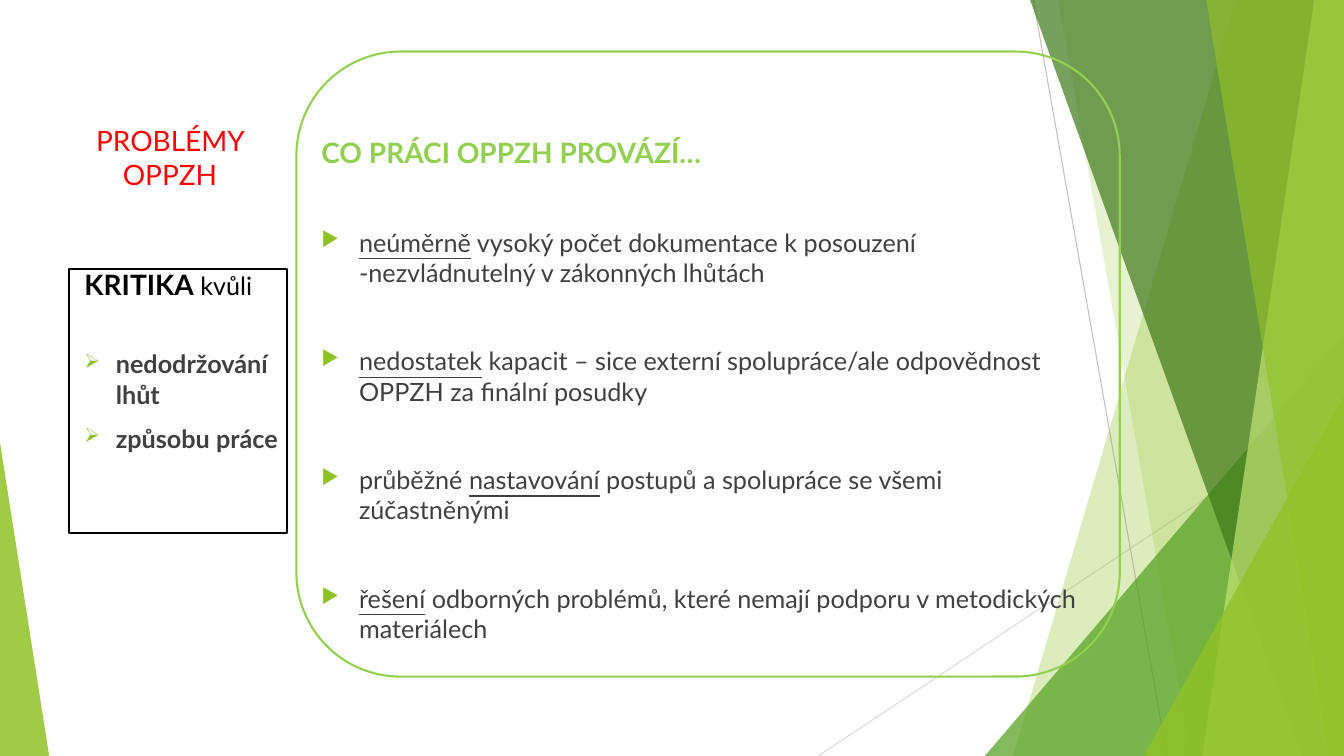
from lxml.etree import SubElement
from pptx import Presentation
from pptx.dml.color import RGBColor
from pptx.enum.shapes import MSO_CONNECTOR, MSO_SHAPE
from pptx.enum.text import MSO_ANCHOR, PP_ALIGN
from pptx.oxml.ns import qn
from pptx.util import Cm, Pt

FONT = "Lato"
GREEN, LIME, GREY = "90C226", "92D050", "404040"
WIDTH, HEIGHT = 33.87, 19.05


def color(hex_value):
    return RGBColor.from_string(hex_value)


def add_run(p, text, size=18, rgb=GREY, bold=False, underline=False):
    r = p.add_run()
    r.text = text
    r.font.name = FONT
    r.font.size = Pt(size)
    r.font.bold = bold
    r.font.underline = underline
    r.font.color.rgb = color(rgb)


def add_text_box(s, x, y, w, h, anchor=MSO_ANCHOR.TOP):
    tf = s.shapes.add_textbox(Cm(x), Cm(y), Cm(w), Cm(h)).text_frame
    tf.word_wrap = True
    tf.vertical_anchor = anchor
    return tf


def add_bullet(p, char, indent):
    pPr = p._p.get_or_add_pPr()
    pPr.set("marL", str(Cm(indent)))
    pPr.set("indent", str(-Cm(indent)))
    bu_clr = SubElement(pPr, qn("a:buClr"))
    SubElement(bu_clr, qn("a:srgbClr"), val=GREEN)
    SubElement(pPr, qn("a:buSzPct"), val="80000")
    SubElement(pPr, qn("a:buChar"), char=char)


def add_frame(s, kind, x, y, w, h, rgb):
    sp = s.shapes.add_shape(kind, Cm(x), Cm(y), Cm(w), Cm(h))
    sp.shadow.inherit = False
    sp.fill.background()
    sp.line.color.rgb = color(rgb)
    sp.line.width = Pt(1.5)


def add_facet(s, points, rgb, opacity):
    points = [(Cm(px), Cm(py)) for px, py in points]
    builder = s.shapes.build_freeform(*points[0])
    builder.add_line_segments(points[1:], close=True)
    sp = builder.convert_to_shape()
    sp.shadow.inherit = False
    sp.line.fill.background()
    sp.fill.solid()
    sp.fill.fore_color.rgb = color(rgb)
    clr = sp._element.spPr.find(qn("a:solidFill"))[0]
    SubElement(clr, qn("a:alpha"), val=str(opacity * 1000))


def add_background(s, x, y, w, h):
    # Thin crossing lines
    for x1, y1, x2, y2, rgb in [(20.62, h, w, 10.24, "D9D9D9"),
                                (26.04, 0, 29.41, h, "BFBFBF")]:
        line = s.shapes.add_connector(MSO_CONNECTOR.STRAIGHT, Cm(x + x1), Cm(y + y1),
                                      Cm(x + x2), Cm(y + y2))
        line.line.color.rgb = color(rgb)
        line.line.width = Pt(0.75)
        SubElement(line._element.spPr, qn("a:effectLst"))

    # Facets: a slanted edge from (x1, y1) to the bottom, closed along one side
    for x1, y1, x2, side, rgb, opacity in [
        (31.14, 0, 25.53, w, GREEN, 30),
        (26.67, 0, 30.02, w, GREEN, 20),
        (w, 8.46, 24.82, w, "54A021", 72),
        (25.96, 0, 32.82, w, "3F7819", 70),
        (33.12, 0, 30.3, w, "C0E474", 70),
        (30.4, 0, 33.5, w, GREEN, 65),
        (w, 9.98, 28.83, w, GREEN, 80),
        (0, 11.15, 1.24, 0, GREEN, 85),
    ]:
        corners = [(x1, y1), (x2, h), (side, h), (side, y1)]
        add_facet(s, [(x + px, y + py) for px, py in corners], rgb, opacity)


def add_heading(s, x, y, w, h):
    p = add_text_box(s, x, y, w, h).paragraphs[0]
    p.alignment = PP_ALIGN.CENTER
    add_run(p, "PROBLÉMY OPPZH", size=20, rgb="FF0000")


def add_criticism(s, x, y, w, h):
    # Title
    tf = add_text_box(s, x + 0.15, y - 0.4, w + 5, 1.34, MSO_ANCHOR.BOTTOM)
    p = tf.paragraphs[0]
    add_run(p, "KRITIKA", size=20, rgb="000000", bold=True)
    add_run(p, " kvůli", rgb="000000")

    # Reasons
    tf = add_text_box(s, x + 0.15, y + 1.88, w + 0.05, h - 2)
    for i, reason in enumerate(["nedodržování lhůt", "způsobu práce"]):
        p = tf.add_paragraph() if i else tf.paragraphs[0]
        p.space_before = Pt(10 if i else 0)
        add_bullet(p, "➢", 0.79)
        add_run(p, reason, bold=True)

    add_frame(s, MSO_SHAPE.RECTANGLE, x, y, w, h, "000000")


def add_circumstances(s, x, y, w, h):
    # Heading
    tf = add_text_box(s, x + 0.38, y + 1.98, w - 1.01, h - 2.2)
    add_run(tf.paragraphs[0], "CO PRÁCI OPPZH PROVÁZÍ…", size=20, rgb=LIME, bold=True)

    # Points: plain start, underlined word, plain rest
    for start, key, rest in [
        ("", "neúměrně", " vysoký počet dokumentace k posouzení -nezvládnutelný v zákonných lhůtách"),
        ("", "nedostatek", " kapacit – sice externí spolupráce/ale odpovědnost OPPZH za finální posudky"),
        ("průběžné ", "nastavování", " postupů a spolupráce se všemi zúčastněnými"),
        ("", "řešení", " odborných problémů, které nemají podporu v metodických materiálech"),
    ]:
        p = tf.add_paragraph()
        p.space_before = Pt(41.6)
        add_bullet(p, "▶", 0.95)
        if start:
            add_run(p, start)
        add_run(p, key, underline=True)
        add_run(p, rest)

    add_frame(s, MSO_SHAPE.ROUNDED_RECTANGLE, x, y, w, h, LIME)


def main():
    prs = Presentation()
    prs.slide_width, prs.slide_height = Cm(WIDTH), Cm(HEIGHT)
    s = prs.slides.add_slide(prs.slide_layouts[6])
    add_background(s, 0, 0, WIDTH, HEIGHT)
    add_criticism(s, 1.73, 6.78, 5.51, 6.65)
    add_circumstances(s, 7.47, 1.3, 20.75, 15.75)
    add_heading(s, 1.35, 3, 5.87, 1.98)
    prs.save("out.pptx")


if __name__ == "__main__":
    main()
